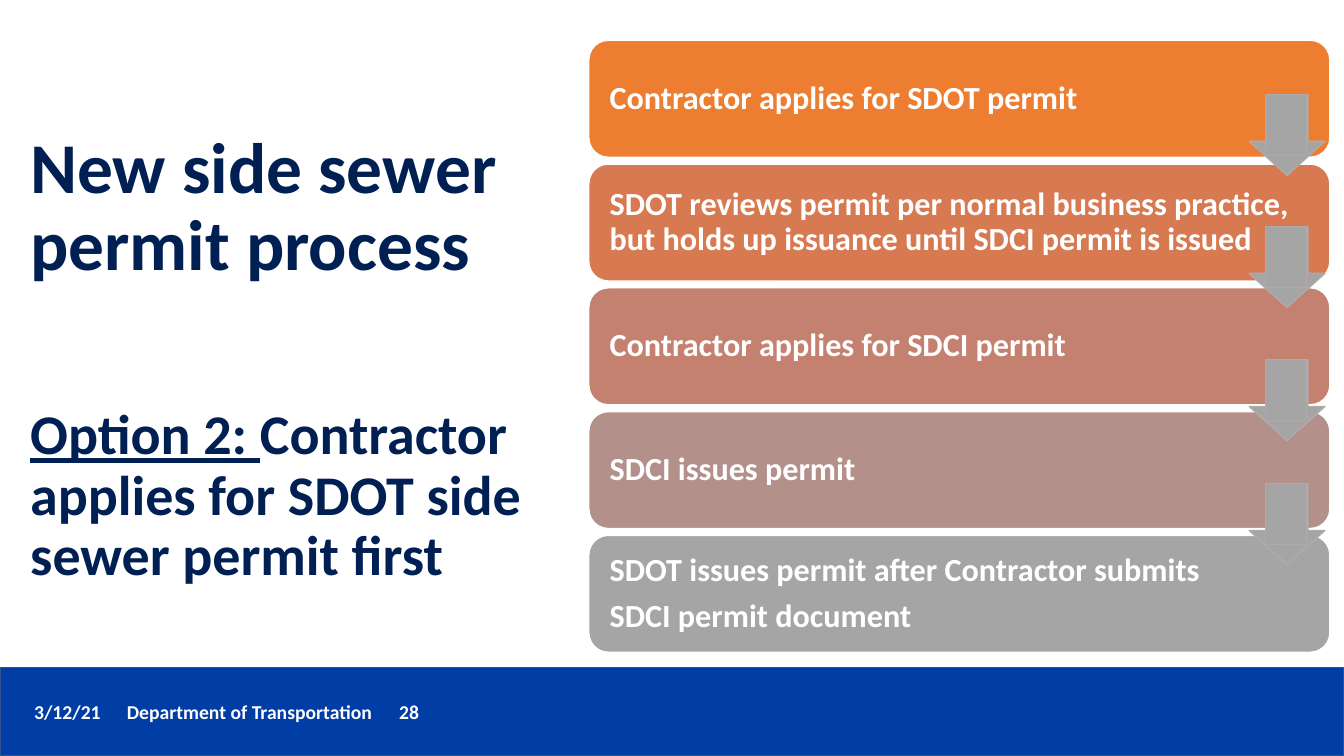
from pptx import Presentation
from pptx.dml.color import RGBColor
from pptx.enum.shapes import MSO_SHAPE as Kind
from pptx.enum.text import MSO_ANCHOR as Anchor, MSO_AUTO_SIZE as Fit, PP_ALIGN as Align
from pptx.oxml import parse_xml
from pptx.oxml.ns import nsdecls
from pptx.util import Inches, Pt

WIDE, HIGH = Inches(13.33), Inches(7.5)
NAVY, BLUE, GREY, WHITE = "001F52", "003DA5", "A5A5A5", "FFFFFF"
STEPS = [
    ("ED7D31", ["Contractor applies for SDOT permit"]),
    ("D87A51", ["SDOT reviews permit per normal business practice, "
                "but holds up issuance until SDCI permit is issued"]),
    ("C48170", ["Contractor applies for SDCI permit"]),
    ("B4908B", ["SDCI issues permit"]),
    (GREY, ["SDOT issues permit after Contractor submits",
            "SDCI permit document"]),
]
STEP_TOP, STEP_GAP = 5.33, 16.37
ARROW_TOPS = [12.53, 30, 47.6, 64]


def color(code):
    return RGBColor.from_string(code)


def area(left, top, wide, high):
    """Turn percentages of the slide into lengths."""
    return (int(WIDE * left / 100), int(HIGH * top / 100),
            int(WIDE * wide / 100), int(HIGH * high / 100))


def style(para, size, code):
    font = para.font
    font.name, font.size, font.bold = "Calibri", Pt(size), True
    font.color.rgb = color(code)
    para.alignment = Align.LEFT


def add_block(slide, kind, place, fill, line, width=1):
    block = slide.shapes.add_shape(kind, *area(*place))
    block.shadow.inherit = False
    block.fill.solid()
    block.fill.fore_color.rgb = color(fill)
    block.line.color.rgb = color(line)
    block.line.width = Pt(width)
    return block


def add_step(slide, row, fill, lines):
    place = (43.81, STEP_TOP + row * STEP_GAP, 55.14, 15.47)
    frame = add_block(slide, Kind.ROUNDED_RECTANGLE, place, fill, WHITE).text_frame
    frame.word_wrap = True
    frame.vertical_anchor = Anchor.MIDDLE
    frame.margin_left = frame.margin_right = Inches(0.15)
    for i, line in enumerate(lines):
        para = frame.add_paragraph() if i else frame.paragraphs[0]
        para.text = line
        para.line_spacing = 0.9
        para.space_after = Pt(8)
        style(para, 23, WHITE)


def add_arrow(slide, top):
    """Draw a down arrow with a plain shaft over it."""
    arrow = add_block(slide, Kind.DOWN_ARROW, (92.95, top, 5.63, 10.67), GREY, "AFABAB")
    arrow.adjustments[0], arrow.adjustments[1] = 0.55, 0.45
    add_block(slide, Kind.RECTANGLE, (94.15, top, 3.08, 8), GREY, "AFABAB", 0.75)


def set_title(slide):
    title = slide.shapes.title
    title.left, title.top, title.width, title.height = area(1.5, 7.47, 38.18, 80.27)
    frame = title.text_frame
    frame.auto_size, frame.word_wrap = Fit.NONE, True
    frame.vertical_anchor = Anchor.MIDDLE
    head, option = frame.paragraphs[0], frame.add_paragraph()
    head.text = "New side sewer permit process"
    label = option.add_run()
    label.text = "Option 2: "
    label.font.underline = True
    option.add_run().text = "Contractor applies for SDOT side sewer permit first"
    option.space_before = Pt(86)
    for para, size in ((head, 51), (option, 40)):
        para.line_spacing = 0.9
        style(para, size, NAVY)


def add_footer(slide):
    add_block(slide, Kind.RECTANGLE, (0, 88.27, 100, 11.73), BLUE, "31538F")
    box = slide.shapes.add_textbox(*area(1.8, 91.87, 75.47, 4.53))
    box.text_frame.word_wrap = True
    para = box.text_frame.paragraphs[0]
    para.text = "3/12/21\tDepartment of Transportation\t28"
    tabs = "".join(f'<a:tab pos="{Inches(stop)}" algn="l"/>' for stop in (0.92, 3.62))
    props = para._p.get_or_add_pPr()
    props.append(parse_xml(f'<a:tabLst {nsdecls("a")}>{tabs}</a:tabLst>'))
    style(para, 14, WHITE)


def main():
    deck = Presentation()
    deck.slide_width, deck.slide_height = WIDE, HIGH
    slide = deck.slides.add_slide(deck.slide_layouts[5])
    add_footer(slide)
    set_title(slide)
    for row, (fill, lines) in enumerate(STEPS):
        add_step(slide, row, fill, lines)
    for top in ARROW_TOPS:
        add_arrow(slide, top)
    deck.save("out.pptx")


if __name__ == "__main__":
    main()
